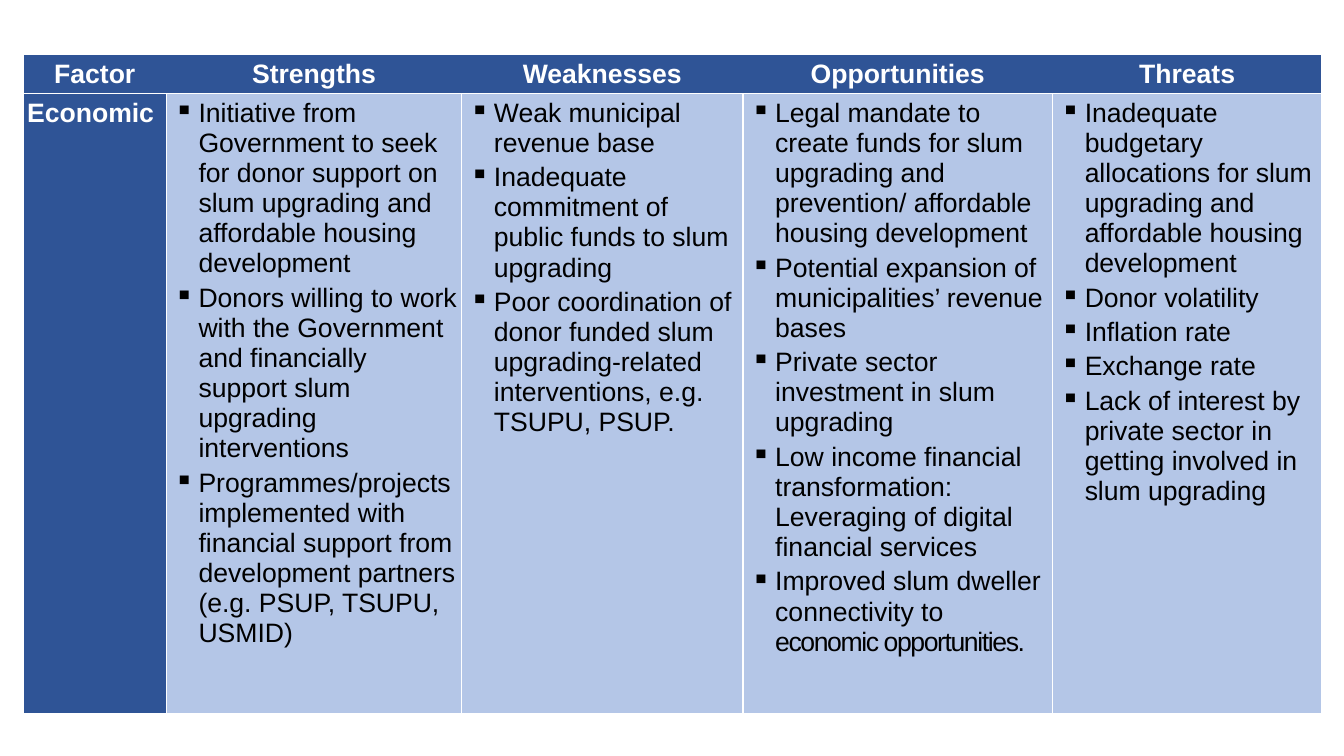
"""Build a slide with a SWOT table of economic factors."""
from lxml import etree
from pptx import Presentation, util as u
from pptx.dml.color import RGBColor
from pptx.enum import text
from pptx.oxml.ns import qn

HUES = {"navy": "2F5496", "pale": "B4C6E7", "white": "FFFFFF", "ink": "000000"}
FONT, SIZE = "Arial", 19
FACTOR = "Economic"
TIGHT = "economic opportunities."
SWOT = {
    "Strengths": [
        "Initiative from Government to seek for donor support on slum upgrading and affordable housing development",
        "Donors willing to work with the Government and financially support slum upgrading interventions",
        "Programmes/projects implemented with financial support from development partners (e.g. PSUP, TSUPU, USMID)",
    ],
    "Weaknesses": [
        "Weak municipal revenue base",
        "Inadequate commitment of public funds to slum upgrading",
        "Poor coordination of donor funded slum upgrading-related interventions, e.g. TSUPU, PSUP.",
    ],
    "Opportunities": [
        "Legal mandate to create funds for slum upgrading and prevention/ affordable housing development",
        "Potential expansion of municipalities’ revenue bases",
        "Private sector investment in slum upgrading",
        "Low income financial transformation: Leveraging of digital financial services",
        "Improved slum dweller connectivity to " + TIGHT,
    ],
    "Threats": [
        "Inadequate budgetary allocations for slum upgrading and affordable housing development",
        "Donor volatility",
        "Inflation rate",
        "Exchange rate",
        "Lack of interest by private sector in getting involved in slum upgrading",
    ],
}
WIDE, HIGH = 13.33, 7.5
LEFT, TOP = 0.23, 0.54
COLS = [1.42, 2.93, 2.79, 3.07, 2.67]
ROWS = [0.39, 6.15]
PAD = 0.04


def paint(cell, hue, bare=()):
    """Set the fill, the insets and the white edges, leaving bare sides open."""
    props = cell._tc.get_or_add_tcPr()
    for side in "LRTB":
        line = etree.SubElement(props, qn(f"a:ln{side}"), w=str(u.Pt(1)))
        if side in bare:
            etree.SubElement(line, qn("a:noFill"))
        else:
            fill = etree.SubElement(line, qn("a:solidFill"))
            etree.SubElement(fill, qn("a:srgbClr"), val=HUES["white"])
    cell.fill.solid()
    cell.fill.fore_color.rgb = RGBColor.from_string(HUES[hue])
    cell.margin_left = cell.margin_right = u.Inches(PAD)
    cell.margin_top = cell.margin_bottom = u.Inches(PAD)


def style(para, hue, bold, align, after, left=0, first=0):
    """Set the font, spacing and indents of a paragraph."""
    font = para.font
    font.name, font.size, font.bold = FONT, u.Pt(SIZE), bold
    font.color.rgb = RGBColor.from_string(HUES[hue])
    para.alignment, para.line_spacing = align, 1.02
    para.space_before, para.space_after = u.Pt(0), u.Pt(after)
    props = para._p.get_or_add_pPr()
    props.set("marL", str(u.Inches(left)))
    props.set("indent", str(u.Inches(first)))
    return props


def label(cell, words, align, after, left=0, first=0):
    """Write a white bold heading."""
    para = cell.text_frame.paragraphs[0]
    para.add_run().text = words
    style(para, "white", True, align, after, left, first)


def items(cell, points):
    """Write a bulleted list, with the tight ending closed up."""
    frame = cell.text_frame
    for i, point in enumerate(points):
        para = frame.add_paragraph() if i else frame.paragraphs[0]
        para.add_run().text = point.removesuffix(TIGHT)
        if point.endswith(TIGHT):
            run = para.add_run()
            run.text = TIGHT
            run.font._element.set("spc", "-100")
        props = style(para, "ink", False, text.PP_ALIGN.LEFT, 3, 0.28, -0.24)
        bullet = etree.Element(qn("a:buChar"), char="▪")
        props.find(qn("a:defRPr")).addprevious(bullet)


def main():
    """Lay out the table and save the deck."""
    deck = Presentation()
    deck.slide_width, deck.slide_height = u.Inches(WIDE), u.Inches(HIGH)
    slide = deck.slides.add_slide(deck.slide_layouts[6])
    box = [u.Inches(n) for n in (LEFT, TOP, sum(COLS), sum(ROWS))]
    table = slide.shapes.add_table(len(ROWS), len(COLS), *box).table
    for col, width in zip(table.columns, COLS):
        col.width = u.Inches(width)
    for row, height in zip(table.rows, ROWS):
        row.height = u.Inches(height)
    table.horz_banding = False

    last = len(COLS) - 1
    for i in range(len(COLS)):
        bare = ("L" if i else "") + ("R" if i < last else "")
        paint(table.cell(0, i), "navy", bare)
        paint(table.cell(1, i), "pale" if i else "navy")

    label(table.cell(0, 0), "Factor", text.PP_ALIGN.CENTER, 8)
    label(table.cell(1, 0), FACTOR, text.PP_ALIGN.JUSTIFY, 8)
    for i, (head, points) in enumerate(SWOT.items(), 1):
        cell = table.cell(0, i)
        cell.vertical_anchor = text.MSO_ANCHOR.MIDDLE
        label(cell, head, text.PP_ALIGN.CENTER, 3, 0.14, -0.2)
        items(table.cell(1, i), points)
    deck.save("out.pptx")


if __name__ == "__main__":
    main()
